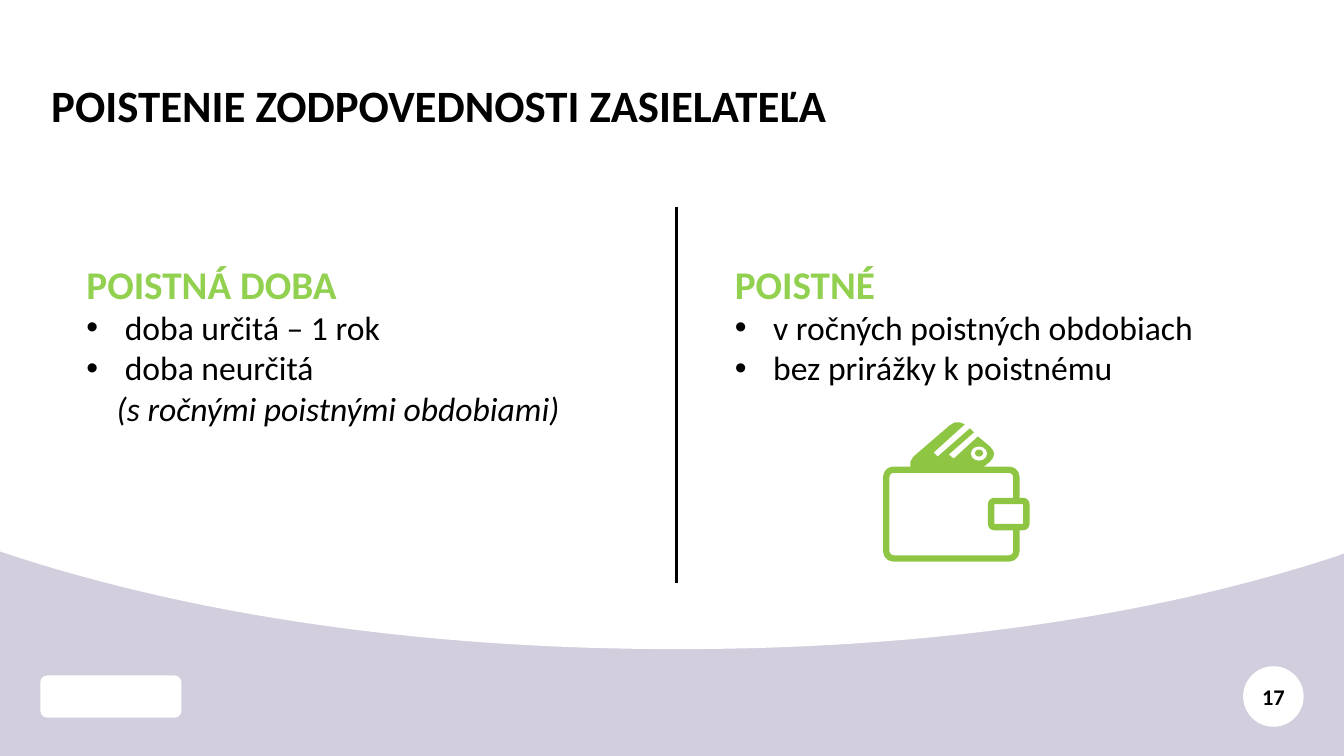
from lxml.etree import SubElement
from pptx import Presentation
from pptx.dml.color import RGBColor
from pptx.enum.shapes import MSO_CONNECTOR, MSO_SHAPE
from pptx.enum.text import MSO_ANCHOR, PP_ALIGN
from pptx.oxml.ns import qn
from pptx.util import Inches, Pt

FONT = "Calibri"
COLORS = {"lilac": "D3CEDE", "white": "FFFFFF", "black": "000000",
          "heading": "92D050", "wallet": "8EC644"}

TITLE = "POISTENIE ZODPOVEDNOSTI ZASIELATEĽA"
PAGE_NUMBER = "17"
TOPICS = [
    {"at": (0.76, 2.53, 5.74, 1.78), "heading": "POISTNÁ DOBA",
     "bullets": ["doba určitá – 1 rok", "doba neurčitá"],
     "note": "(s ročnými poistnými obdobiami)"},
    {"at": (7.19, 2.53, 5.49, 1.38), "heading": "POISTNÉ",
     "bullets": ["v ročných poistných obdobiach", "bez prirážky k poistnému"],
     "note": None},
]

WAVE_CURVES = [
    [(13.25, 5.52), (11.85, 5.98), (9.7, 6.44), (6.72, 6.44)],
    [(6.72, 6.44), (3.74, 6.44), (1.57, 5.98), (0.15, 5.52)],
]
CARD = [(9.05, 4.66), (9.03, 4.63), (9.03, 4.58), (9.06, 4.53), (9.42, 4.22),
        (9.47, 4.19), (9.52, 4.19), (9.57, 4.21), (9.26, 4.49), (9.3, 4.53),
        (9.62, 4.25), (9.66, 4.29), (9.41, 4.51), (9.46, 4.55), (9.7, 4.33),
        (9.82, 4.43), (9.85, 4.47), (9.86, 4.5), (9.85, 4.54), (9.82, 4.58),
        (9.76, 4.63), (9.73, 4.66)]
WALLET_PARTS = [
    (MSO_SHAPE.ROUNDED_RECTANGLE, (8.79, 4.66, 1.29, 0.88), "white", 4.5, 0.08),
    (MSO_SHAPE.ROUNDED_RECTANGLE, (9.83, 4.97, 0.35, 0.26), "white", 4.5, 0.12),
    (MSO_SHAPE.OVAL, (9.63, 4.43, 0.16, 0.14), "white", 0, None),
    (MSO_SHAPE.OVAL, (9.67, 4.46, 0.08, 0.07), "wallet", 0, None),
]


def rgb(name):
    return RGBColor.from_string(COLORS[name])


def paint(shape, fill, line_width=0):
    shape.shadow.inherit = False
    shape.fill.solid()
    shape.fill.fore_color.rgb = rgb(fill)
    if line_width:
        shape.line.color.rgb = rgb("wallet")
        shape.line.width = Pt(line_width)
    else:
        shape.line.fill.background()


def add_figure(kind, at, fill, line_width=0, rounding=None):
    figure = slide.shapes.add_shape(kind, *map(Inches, at))
    paint(figure, fill, line_width)
    if rounding is not None:
        figure.adjustments[0] = rounding
    return figure


def add_outline(points, fill):
    corners = [(Inches(x), Inches(y)) for x, y in points]
    builder = slide.shapes.build_freeform(*corners[0])
    builder.add_line_segments(corners[1:], close=True)
    paint(builder.convert_to_shape(), fill)


def bezier(points, steps=40):
    for step in range(steps + 1):
        t = step / steps
        weights = [(1 - t) ** 3, 3 * t * (1 - t) ** 2, 3 * t * t * (1 - t), t ** 3]
        yield tuple(sum(w * p[axis] for w, p in zip(weights, points)) for axis in (0, 1))


def add_frame(at, anchor=MSO_ANCHOR.TOP):
    frame = slide.shapes.add_textbox(*map(Inches, at)).text_frame
    frame.word_wrap = True
    frame.vertical_anchor = anchor
    return frame


def write(frame, text, size=24, color="black", bold=False, italic=False,
          align=PP_ALIGN.LEFT, spacing=None, bullet=False, indent=0):
    paragraph = frame.paragraphs[0]
    if paragraph.runs:
        paragraph = frame.add_paragraph()
    paragraph.alignment = align
    paragraph.line_spacing = spacing
    properties = paragraph._p.get_or_add_pPr()
    properties.set("marL", str(Inches(indent)))
    properties.set("indent", str(Inches(-indent if bullet else 0)))
    if bullet:
        SubElement(properties, qn("a:buFont"), typeface="Arial")
        SubElement(properties, qn("a:buChar"), char="•")
    run = paragraph.add_run()
    run.text = text
    run.font.name = FONT
    run.font.size = Pt(size)
    run.font.bold = bold
    run.font.italic = italic
    run.font.color.rgb = rgb(color)


deck = Presentation()
deck.slide_width, deck.slide_height = Inches(13.33), Inches(7.5)
slide = deck.slides.add_slide(deck.slide_layouts[6])
slide.background.fill.solid()
slide.background.fill.fore_color.rgb = rgb("lilac")

page_badge = add_figure(MSO_SHAPE.OVAL, (12.33, 6.61, 0.6, 0.6), "white").text_frame
page_badge.margin_left = page_badge.margin_right = Inches(0.05)
page_badge.margin_top = page_badge.margin_bottom = Inches(0.05)
page_badge.vertical_anchor = MSO_ANCHOR.MIDDLE
write(page_badge, PAGE_NUMBER, size=16, bold=True, align=PP_ALIGN.CENTER)

wave = [point for curve in WAVE_CURVES for point in bezier(curve)]
add_outline([(0, 0), (13.33, 0), (13.33, 5.49), *wave, (0, 5.47)], "white")

write(add_frame((0.41, 0.4, 12.52, 0.96), MSO_ANCHOR.BOTTOM), TITLE,
      size=32, bold=True, spacing=0.85)

for topic in TOPICS:
    column = add_frame(topic["at"])
    write(column, topic["heading"], size=28, color="heading", bold=True)
    for item in topic["bullets"]:
        write(column, item, bullet=True, indent=0.38)
    if topic["note"]:
        write(column, topic["note"], italic=True, indent=0.3)

divider = slide.shapes.add_connector(
    MSO_CONNECTOR.STRAIGHT, Inches(6.71), Inches(2.05), Inches(6.71), Inches(5.78))
divider.line.color.rgb = rgb("black")
divider.line.width = Pt(2.25)
SubElement(divider._element.spPr, qn("a:effectLst"))

add_figure(MSO_SHAPE.ROUNDED_RECTANGLE, (0.4, 6.7, 1.4, 0.42), "white")

add_outline(CARD, "wallet")
for part in WALLET_PARTS:
    add_figure(*part)

deck.save("out.pptx")
